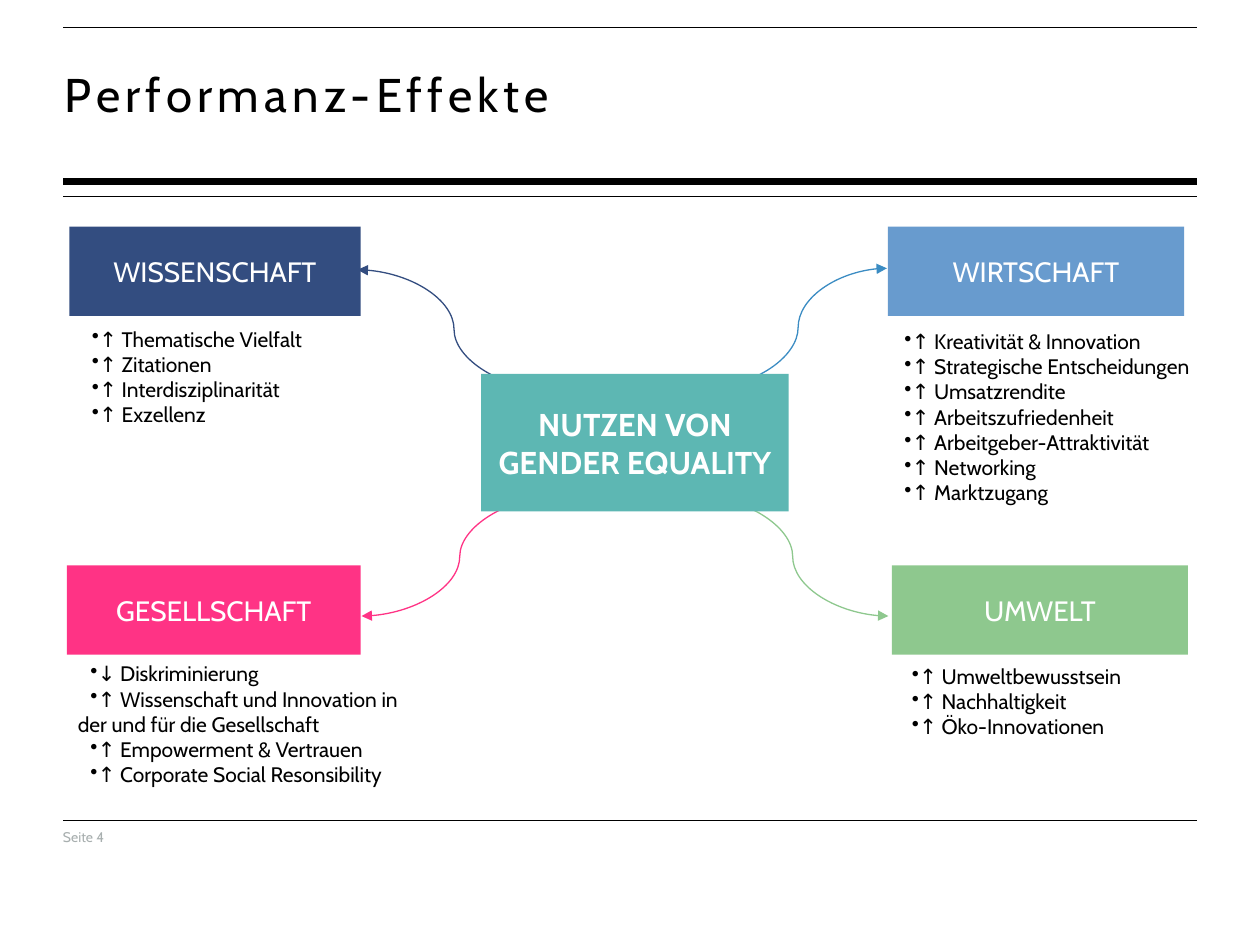
from lxml import etree
from pptx import Presentation
from pptx.dml.color import RGBColor
from pptx.enum.shapes import MSO_CONNECTOR, MSO_SHAPE
from pptx.enum.text import MSO_ANCHOR, PP_ALIGN
from pptx.oxml.ns import qn
from pptx.util import Cm, Pt

LINE, CURVE = MSO_CONNECTOR.STRAIGHT, MSO_CONNECTOR.CURVE
RECT = MSO_SHAPE.RECTANGLE
TOP, MID = MSO_ANCHOR.TOP, MSO_ANCHOR.MIDDLE
LEFT, MIDDLE = PP_ALIGN.LEFT, PP_ALIGN.CENTER

THEME = {
    "font": "Cabin",
    "ink": "000000", "paper": "FFFFFF", "muted": "A8AFAF", "core": "5DB7B3",
    "navy": "334D80", "pink": "FF3385", "blue": "689BCE", "deep": "3B8CC3",
    "green": "8EC88E",
    "title": 27, "hub": 18, "head": 16, "body": 12, "foot": 8,
    "thin": 0.4, "thick": 3.57, "curve": 0.75,
}

TITLE = "Performanz-Effekte"
FOOT = "Seite 4"
HUB = ["NUTZEN VON", "GENDER EQUALITY"]
HUB_BOX = (9.7, 7.54, 6.2, 2.77)
RULES = [(0.56, "thin"), (3.66, "thick"), (3.96, "thin"), (16.54, "thin")]
EDGE, RIGHT = 1.27, 24.13
HEAD_H, ROW_H, PAD = 1.8, 0.51, 0.254

BRANCHES = [
    {"name": "WISSENSCHAFT", "fill": "navy", "line": "navy",
     "box": (1.4, 4.57, 5.87), "list": (1.35, 6.45, 5.92),
     "curve": (11.1, 7.85, 7.21, 5.44),
     "items": ["↑ Thematische Vielfalt", "↑ Zitationen",
               "↑ Interdisziplinarität", "↑ Exzellenz"]},
    {"name": "GESELLSCHAFT", "fill": "pink", "line": "pink",
     "box": (1.35, 11.4, 5.92), "list": (1.32, 13.2, 7.34),
     "curve": (11.25, 10.01, 7.29, 12.42),
     "items": ["↓ Diskriminierung",
               "↑ Wissenschaft und Innovation in der und für die Gesellschaft",
               "↑ Empowerment & Vertrauen", "↑ Corporate Social Resonsibility"]},
    {"name": "WIRTSCHAFT", "fill": "blue", "line": "deep",
     "box": (17.9, 4.57, 5.97), "list": (17.73, 6.5, 6.81),
     "curve": (14.3, 7.8, 17.88, 5.41),
     "items": ["↑ Kreativität & Innovation", "↑ Strategische Entscheidungen",
               "↑ Umsatzrendite", "↑ Arbeitszufriedenheit",
               "↑ Arbeitgeber-Attraktivität", "↑ Networking", "↑ Marktzugang"]},
    {"name": "UMWELT", "fill": "green", "line": "green",
     "box": (17.98, 11.4, 5.97), "list": (17.88, 13.25, 6.68),
     "curve": (14.05, 10.01, 17.91, 12.42),
     "items": ["↑ Umweltbewusstsein", "↑ Nachhaltigkeit", "↑ Öko-Innovationen"]},
]


def tint(name):
    return RGBColor.from_string(THEME[name])


def cms(vals):
    return [Cm(v) for v in vals]


def bullet(para):
    props = para._p.get_or_add_pPr()
    props.set("marL", "0")
    props.set("indent", str(Cm(PAD)))
    etree.SubElement(props, qn("a:buChar"), char="•")
    tabs = etree.SubElement(props, qn("a:tabLst"))
    etree.SubElement(tabs, qn("a:tab"), pos=str(Cm(0.48)), algn="l")


def write(shape, lines, size="body", color="ink", bold=False, align=LEFT,
          anchor=TOP, inset=True, dots=False, space=0):
    frame = shape.text_frame
    frame.word_wrap = True
    frame.vertical_anchor = anchor
    if not inset:
        frame.margin_left = frame.margin_right = 0
        frame.margin_top = frame.margin_bottom = 0
    for i, line in enumerate(lines):
        para = frame.add_paragraph() if i else frame.paragraphs[0]
        para.alignment = align
        if dots:
            bullet(para)
        run = para.add_run()
        run.text = line
        font = run.font
        font.name, font.size, font.bold = THEME["font"], Pt(THEME[size]), bold
        font.color.rgb = tint(color)
        if space:
            run._r.get_or_add_rPr().set("spc", str(space * 100))


def link(slide, kind, ends, color, width, arrow=False):
    line = slide.shapes.add_connector(kind, *cms(ends))
    line.line.color.rgb = tint(color)
    line.line.width = Pt(THEME[width])
    if arrow:
        etree.SubElement(line.line._get_or_add_ln(), qn("a:tailEnd"), type="triangle")
    etree.SubElement(line._element.spPr, qn("a:effectLst"))


def block(slide, place, fill, lines, **form):
    box = slide.shapes.add_shape(RECT, *cms(place))
    box.shadow.inherit = False
    box.fill.solid()
    box.fill.fore_color.rgb = tint(fill)
    box.line.fill.background()
    write(box, lines, color="paper", align=MIDDLE, anchor=MID, **form)


def main():
    deck = Presentation()
    deck.slide_width, deck.slide_height = Cm(25.4), Cm(19.05)
    slide = deck.slides.add_slide(deck.slide_layouts[5])

    title = slide.shapes.title
    title.left, title.top, title.width, title.height = cms((1.3, 1.32, 22.83, 1.93))
    write(title, [TITLE], size="title", inset=False, space=3)

    for y, width in RULES:
        link(slide, LINE, (EDGE, y, RIGHT, y), "ink", width)
    foot = slide.shapes.add_textbox(*cms((EDGE, 16.71, 5, 0.33)))
    write(foot, [FOOT], size="foot", color="muted", inset=False)

    for part in BRANCHES:
        link(slide, CURVE, part["curve"], part["line"], "curve", arrow=True)
    block(slide, HUB_BOX, "core", HUB, size="hub", bold=True)

    for part in BRANCHES:
        block(slide, (*part["box"], HEAD_H), part["fill"], [part["name"]], size="head")
        high = len(part["items"]) * ROW_H + PAD
        notes = slide.shapes.add_textbox(*cms((*part["list"], high)))
        write(notes, part["items"], dots=True)

    deck.save("out.pptx")


if __name__ == "__main__":
    main()
